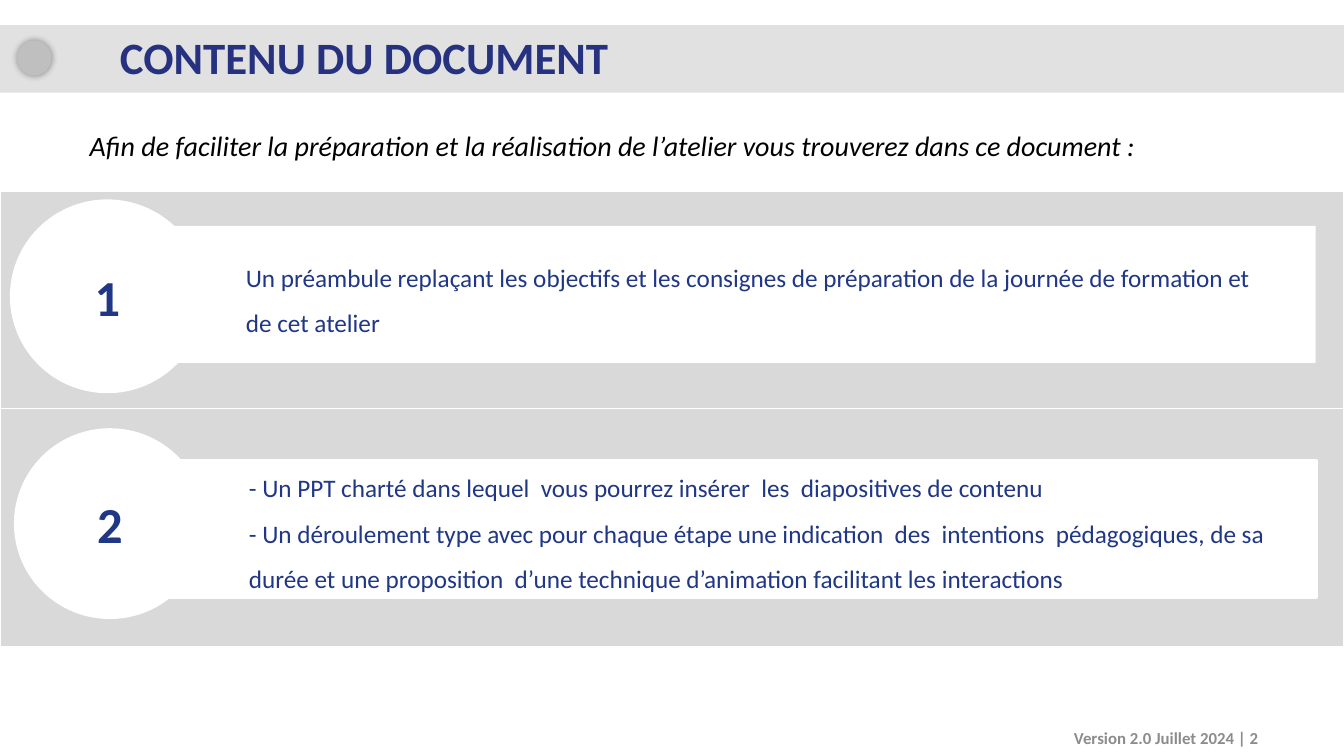
from dataclasses import dataclass
from lxml.etree import SubElement
from pptx import Presentation
from pptx.dml.color import RGBColor
from pptx.enum.shapes import MSO_SHAPE
from pptx.enum.text import MSO_ANCHOR, MSO_AUTO_SIZE, PP_ALIGN
from pptx.oxml.ns import qn
from pptx.util import Inches, Pt


@dataclass(frozen=True)
class Theme:
    """Hold the colours, font and type sizes of the slide."""
    font: str = "Calibri"
    white: str = "FFFFFF"
    black: str = "000000"
    head: str = "E1E1E1"
    dot: str = "BFBFBF"
    band: str = "D9D9D9"
    title: str = "263280"
    ink: str = "203786"
    note: str = "8C8C8C"
    title_size: int = 32
    intro_size: int = 20
    text_size: int = 18
    num_size: int = 36
    note_size: int = 12


THEME = Theme()
WIDTH = 13.33
ROWS = [
    {"height": 2.15, "plate": (1.08, 0.34, 11.97, 1.36), "edge": 0,
     "disc": (0.13, 0.11, 1.87, 1.86), "text": (2.34, 0.5, 10.33, 0.96),
     "lines": ["Un préambule replaçant les objectifs et les consignes de "
               "préparation de la journée de formation et de cet atelier"]},
    {"height": 2.37, "plate": (1.58, 0.52, 11.47, 1.35), "edge": 3,
     "disc": (0.17, 0.23, 1.84, 1.83), "text": (2.37, 0.44, 10.68, 1.46),
     "lines": ["- Un PPT charté dans lequel  vous pourrez insérer  les  "
               "diapositives de contenu",
               "- Un déroulement type avec pour chaque étape une indication  "
               "des  intentions  pédagogiques, de sa  durée et une "
               "proposition  d’une technique d’animation facilitant les "
               "interactions"]},
]


def place(box, left=0, top=0):
    """Turn a box in inches into lengths, shifted by an origin."""
    x, y, wide, high = box
    return [Inches(n) for n in (left + x, top + y, wide, high)]


def draw(shapes, kind, box, fill, edge=0):
    """Add a filled shape with an optional white outline."""
    shape = shapes.add_shape(kind, *box)
    shape.shadow.inherit = False
    shape.fill.solid()
    shape.fill.fore_color.rgb = RGBColor.from_string(fill)
    if edge:
        shape.line.color.rgb = RGBColor.from_string(THEME.white)
        shape.line.width = Pt(edge)
    else:
        shape.line.fill.background()
    return shape


def write(shape, lines, size, color, bold=False, italic=False,
          align=PP_ALIGN.LEFT, space=1.0, anchor=MSO_ANCHOR.TOP):
    """Write lines of text into a shape, one run per paragraph."""
    frame = shape.text_frame
    frame.word_wrap = True
    frame.auto_size = MSO_AUTO_SIZE.NONE
    frame.vertical_anchor = anchor
    for i, line in enumerate(lines):
        para = frame.add_paragraph() if i else frame.paragraphs[0]
        para.alignment = align
        para.line_spacing = space
        run = para.add_run()
        run.text = line
        font = run.font
        font.name, font.size = THEME.font, Pt(size)
        font.bold, font.italic = bold, italic
        font.color.rgb = RGBColor.from_string(color)


def glow(shape):
    """Give a shape a soft dark halo."""
    effects = shape._element.spPr.find(qn("a:effectLst"))
    halo = SubElement(effects, qn("a:outerShdw"), blurRad=str(Pt(5)),
                      dist="0", dir="0", algn="ctr", rotWithShape="0")
    color = SubElement(halo, qn("a:srgbClr"), val=THEME.black)
    SubElement(color, qn("a:alpha"), val="40000")


def header(slide, left, top, width, height):
    """Draw the title bar with its dot and place the title on it."""
    shapes = slide.shapes
    draw(shapes, MSO_SHAPE.RECTANGLE, place((left, top, width, height)),
         THEME.head)
    glow(draw(shapes, MSO_SHAPE.OVAL,
              place((0.17, 0.15, 0.34, 0.35), left, top), THEME.dot))
    title = shapes.title
    title.left, title.top, title.width, title.height = place(
        (1.09, 0.05, 8.74, 0.59), left, top)
    write(title, ["CONTENU DU DOCUMENT"], THEME.title_size, THEME.title,
          bold=True, space=0.9, anchor=MSO_ANCHOR.MIDDLE)
    shapes._spTree.append(title._element)


def intro(slide, left, top, width, height):
    """Write the sentence that leads into the rows."""
    box = slide.shapes.add_textbox(*place((left, top, width, height)))
    write(box, ["Afin de faciliter la préparation et la réalisation de "
                "l’atelier vous trouverez dans ce document :"],
          THEME.intro_size, THEME.black, italic=True, space=1.5)


def entry(slide, left, top, width, number, row):
    """Draw one numbered row on its grey band."""
    draw(slide.shapes, MSO_SHAPE.RECTANGLE,
         place((left, top, width, row["height"])), THEME.band, edge=1)
    parts = slide.shapes.add_group_shape().shapes
    draw(parts, MSO_SHAPE.RECTANGLE, place(row["plate"], left, top),
         THEME.white, row["edge"])
    disc = draw(parts, MSO_SHAPE.OVAL, place(row["disc"], left, top),
                THEME.white, edge=4.5)
    write(disc, [str(number)], THEME.num_size, THEME.ink, bold=True,
          align=PP_ALIGN.CENTER, anchor=MSO_ANCHOR.MIDDLE)
    box = parts.add_textbox(*place(row["text"], left, top))
    write(box, row["lines"], THEME.text_size, THEME.ink, space=1.5)


def footer(slide, left, top, width, height):
    """Write the version and page number."""
    box = slide.shapes.add_textbox(*place((left, top, width, height)))
    write(box, ["Version 2.0 Juillet 2024 | 2"], THEME.note_size, THEME.note,
          bold=True, align=PP_ALIGN.RIGHT, anchor=MSO_ANCHOR.MIDDLE)


def main():
    """Build the slide and save it."""
    deck = Presentation()
    deck.slide_width, deck.slide_height = Inches(WIDTH), Inches(7.5)
    slide = deck.slides.add_slide(deck.slide_layouts[5])
    header(slide, 0, 0.25, WIDTH, 0.67)
    intro(slide, 0.79, 1.06, 12.37, 1.11)
    top = 1.9
    for number, row in enumerate(ROWS, 1):
        entry(slide, 0, top, WIDTH, number, row)
        top += row["height"]
    footer(slide, 9.58, 7.12, 3, 0.4)
    deck.save("out.pptx")


if __name__ == "__main__":
    main()
